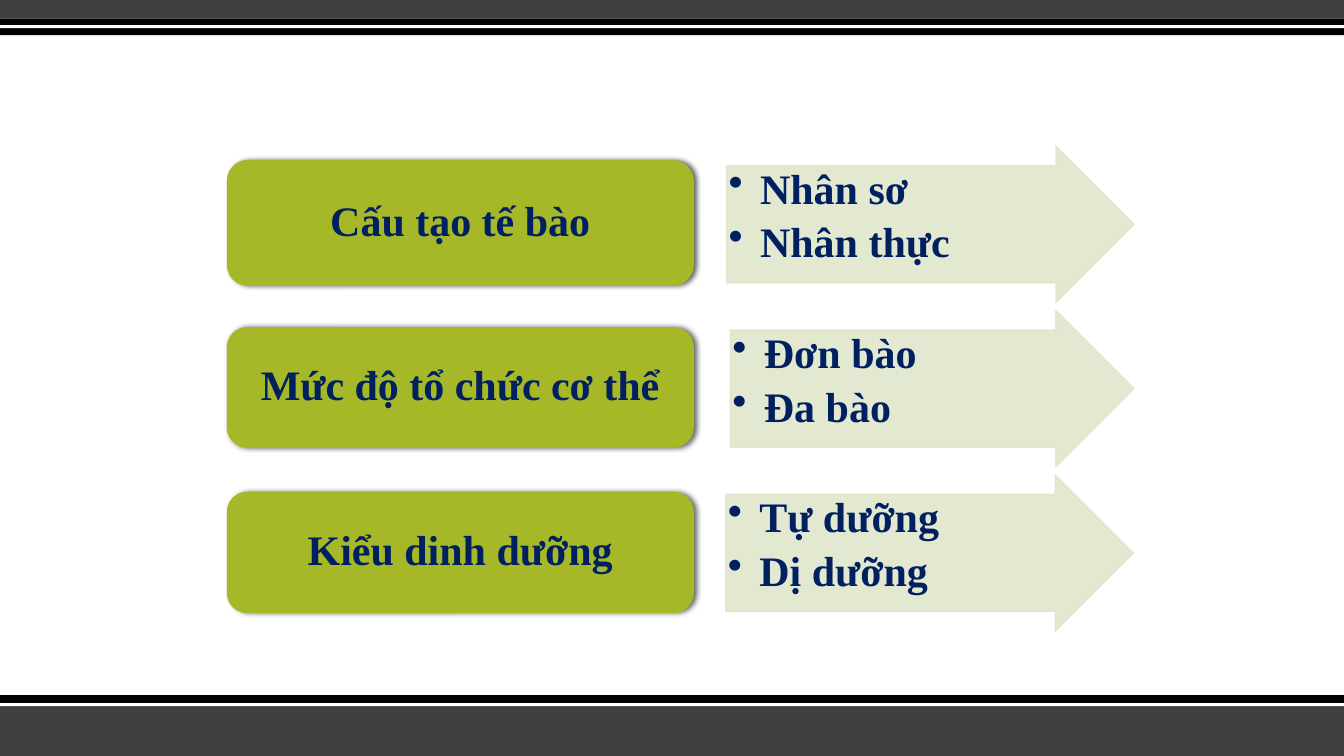
"""Build a slide of three classification criteria, each with an arrow of its types."""
from lxml import etree
from pptx import Presentation
from pptx.dml.color import RGBColor
from pptx.enum.shapes import MSO_SHAPE
from pptx.enum.text import MSO_ANCHOR, PP_ALIGN
from pptx.oxml.ns import qn
from pptx.util import Pt

RECTANGLE = MSO_SHAPE.RECTANGLE
ROUNDED = MSO_SHAPE.ROUNDED_RECTANGLE
ARROW = MSO_SHAPE.RIGHT_ARROW
TOP, MIDDLE = MSO_ANCHOR.TOP, MSO_ANCHOR.MIDDLE
CENTER, JUSTIFY = PP_ALIGN.CENTER, PP_ALIGN.JUSTIFY

COLORS = {"gray": "404040", "black": "000000", "white": "FFFFFF",
          "box": "A6B727", "arrow": "E1E6CD", "text": "002060"}
FONT = "Times New Roman"
FONT_SIZE = 30
SLIDE_WIDTH, SLIDE_HEIGHT = 960, 540

BANDS = [
    ("gray", 504, 36), ("black", 496.6, 7.8), ("white", 502.3, 2.2),
    ("gray", 0, 13.4), ("black", 13.4, 11.8), ("white", 18, 2.2),
]
CRITERIA = [
    {"title": "Cấu tạo tế bào", "types": ["Nhân sơ", "Nhân thực"],
     "box": (114.2, 90), "arrow": (518.9, 291.2)},
    {"title": "Mức độ tổ chức cơ thể", "types": ["Đơn bào", "Đa bào"],
     "box": (233.7, 86), "arrow": (521.7, 288.4)},
    {"title": "Kiểu dinh dưỡng", "types": ["Tự dưỡng", "Dị dưỡng"],
     "box": (351.2, 86.8), "arrow": (518.4, 291.2)},
]
BOX_LEFT, BOX_WIDTH = 162, 333.6
ARROW_TOP, ARROW_HEIGHT, ARROW_PITCH = 104.4, 111.6, 117.4
BULLET_INDENT = 22.5


def add_filled_shape(slide, kind, frame, color):
    shape = slide.shapes.add_shape(kind, *[Pt(length) for length in frame])
    shape.shadow.inherit = False
    shape.fill.solid()
    shape.fill.fore_color.rgb = RGBColor.from_string(COLORS[color])
    shape.line.fill.background()
    return shape


def set_opacity(color_element, percent):
    etree.SubElement(color_element, qn("a:alpha"), val=str(percent * 1000))


def add_soft_shadow(shape):
    effects = shape._element.spPr.find(qn("a:effectLst"))
    shadow = etree.SubElement(effects, qn("a:outerShdw"), blurRad=str(Pt(4)),
                              dist=str(Pt(2)), dir="0", rotWithShape="0")
    set_opacity(etree.SubElement(shadow, qn("a:srgbClr"), val=COLORS["black"]), 60)


def add_bullet(paragraph):
    properties = paragraph._p.get_or_add_pPr()
    properties.set("marL", str(Pt(BULLET_INDENT)))
    properties.set("indent", str(-Pt(BULLET_INDENT)))
    etree.SubElement(properties, qn("a:buChar"), char="•")


def write_lines(shape, lines, alignment, anchor, margins, bulleted=False):
    frame = shape.text_frame
    frame.word_wrap = True
    frame.vertical_anchor = anchor
    frame.margin_left = frame.margin_right = Pt(margins[0])
    frame.margin_top = frame.margin_bottom = Pt(margins[1])
    for index, line in enumerate(lines):
        paragraph = frame.add_paragraph() if index else frame.paragraphs[0]
        paragraph.alignment = alignment
        paragraph.line_spacing = 0.9
        if bulleted:
            paragraph.space_after = Pt(6)
            add_bullet(paragraph)
        run = paragraph.add_run()
        run.text = line
        run.font.name = FONT
        run.font.size = Pt(FONT_SIZE)
        run.font.bold = True
        run.font.color.rgb = RGBColor.from_string(COLORS["text"])


def add_type_arrow(slide, criterion, top):
    left, width = criterion["arrow"]
    arrow = add_filled_shape(slide, ARROW, (left, top, width, ARROW_HEIGHT), "arrow")
    arrow.adjustments[0] = 0.75
    arrow.adjustments[1] = 0.5
    arrow.line.color.rgb = RGBColor.from_string(COLORS["arrow"])
    arrow.line.width = Pt(1)
    for color_element in arrow._element.spPr.iter(qn("a:srgbClr")):
        set_opacity(color_element, 90)
    write_lines(arrow, criterion["types"], JUSTIFY, TOP, (1.5, 1.5), bulleted=True)


def add_title_box(slide, criterion):
    top, height = criterion["box"]
    box = add_filled_shape(slide, ROUNDED, (BOX_LEFT, top, BOX_WIDTH, height), "box")
    add_soft_shadow(box)
    write_lines(box, [criterion["title"]], CENTER, MIDDLE, (8.4, 4.2))


def main():
    presentation = Presentation()
    presentation.slide_width = Pt(SLIDE_WIDTH)
    presentation.slide_height = Pt(SLIDE_HEIGHT)
    slide = presentation.slides.add_slide(presentation.slide_layouts[6])
    for color, top, height in BANDS:
        add_filled_shape(slide, RECTANGLE, (0, top, SLIDE_WIDTH, height), color)
    for row, criterion in enumerate(CRITERIA):
        add_type_arrow(slide, criterion, ARROW_TOP + row * ARROW_PITCH)
        add_title_box(slide, criterion)
    presentation.save("out.pptx")


if __name__ == "__main__":
    main()
